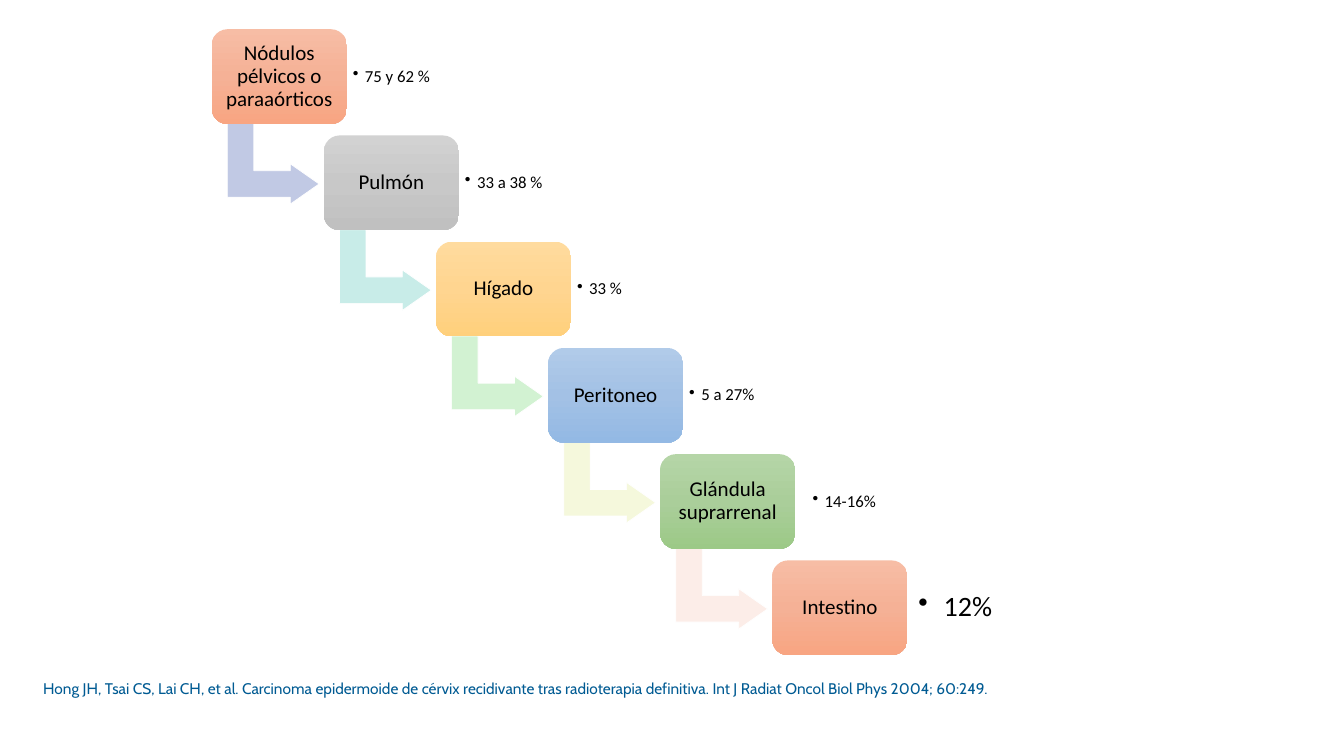
import copy
from dataclasses import dataclass

import pptx
import pptx.dml.color
import pptx.enum.shapes
import pptx.enum.text
import pptx.oxml
import pptx.oxml.ns
import pptx.shapes.autoshape
import pptx.slide
import pptx.util

Inches = pptx.util.Inches
Align = pptx.enum.text.PP_ALIGN
Preset = pptx.enum.shapes.MSO_SHAPE

COLORS: dict[str, str] = {
    "black": "000000",
    "white": "FFFFFF",
    "cite": "005B93",
    "blue arrow": "C1C9E4",
    "teal arrow": "C8ECE8",
    "green arrow": "D2F2D2",
    "lime arrow": "F5F8DC",
    "pink arrow": "FCEDE8",
    "orange top": "F7BDA5", "orange mid": "F5B196", "orange low": "F8A582",
    "gray top": "D2D2D2", "gray mid": "C8C8C8", "gray low": "C0C0C0",
    "gold top": "FFDB9E", "gold mid": "FFD590", "gold low": "FFD07C",
    "blue top": "B1CBE9", "blue mid": "A3C1E5", "blue low": "93B9E4",
    "green top": "B5D5A7", "green mid": "AACE9A", "green low": "9CC987",
}
LEFT, TOP = 2.1, 0.29
STEP_X, STEP_Y = 1.112, 1.054
BOX_W, BOX_H = 1.34, 0.94


@dataclass(frozen=True)
class Site:
    name: str
    rate: str
    tone: str
    arrow: str = ""
    size: float = 12
    hang: float = 0.12
    inset: float = 0.06
    align: Align = Align.LEFT


SITES: list[Site] = [
    Site("Nódulos pélvicos o paraaórticos", "75 y 62 %", "orange", "blue arrow"),
    Site("Pulmón", "33 a 38 %", "gray", "teal arrow"),
    Site("Hígado", "33 %", "gold", "green arrow"),
    Site("Peritoneo", "5 a 27%", "blue", "lime arrow"),
    Site("Glándula suprarrenal", "14-16%", "green", "pink arrow", align=Align.CENTER),
    Site("Intestino", "12%", "orange", size=20, hang=0.25, inset=0.11),
]


def tint(name: str) -> pptx.dml.color.RGBColor:
    return pptx.dml.color.RGBColor.from_string(COLORS[name])


def write(shape: pptx.shapes.autoshape.Shape, text: str, *, size: float,
          font: str = "Calibri", color: str = "black", align: Align = Align.LEFT,
          inset: float | None = None, hang: float = 0, line: float = 0.9,
          anchor: pptx.enum.text.MSO_ANCHOR = pptx.enum.text.MSO_ANCHOR.MIDDLE) -> None:
    frame = shape.text_frame
    frame.word_wrap = True
    frame.vertical_anchor = anchor
    if inset is not None:
        frame.margin_left = frame.margin_right = Inches(inset)
        frame.margin_top = frame.margin_bottom = Inches(inset)
    para = frame.paragraphs[0]
    para.alignment = align
    para.line_spacing = line
    if hang:
        para.level = 1
        props = para._p.get_or_add_pPr()
        props.set("marL", str(Inches(hang)))
        props.set("indent", str(-Inches(hang)))
        mark = pptx.oxml.ns.qn("a:buChar")
        props.append(props.makeelement(mark, {"char": "•"}))
    run = para.add_run()
    run.text = text
    run.font.name = font
    run.font.size = pptx.util.Pt(size)
    run.font.color.rgb = tint(color)


def shade(shape: pptx.shapes.autoshape.Shape, tone: str) -> None:
    fill = shape.fill
    fill.gradient()
    fill.gradient_angle = 270
    stops = shape._element.spPr.find(".//" + pptx.oxml.ns.qn("a:gsLst"))
    stops.insert(1, copy.deepcopy(stops[0]))
    for stop, part, place in zip(fill.gradient_stops, ("top", "mid", "low"), (0, 0.5, 1)):
        stop.color.rgb = tint(f"{tone} {part}")
        stop.position = place


def draw_arrow(slide: pptx.slide.Slide, left: float, top: float, color: str) -> None:
    arrow = slide.shapes.add_shape(Preset.BENT_UP_ARROW, Inches(left), Inches(top),
                                   Inches(0.8), Inches(0.91))
    arrow.rotation = 90
    for spot, value in enumerate((0.328, 0.25, 0.358)):
        arrow.adjustments[spot] = value
    arrow.shadow.inherit = False
    arrow.fill.solid()
    arrow.fill.fore_color.rgb = tint(color)
    arrow.line.color.rgb = tint("white")
    arrow.line.width = pptx.util.Pt(0.5)


def draw_site(slide: pptx.slide.Slide, site: Site, left: float, top: float) -> None:
    if site.arrow:
        draw_arrow(slide, left + 0.21, top + 0.88, site.arrow)
    box = slide.shapes.add_shape(Preset.ROUNDED_RECTANGLE, Inches(left), Inches(top),
                                 Inches(BOX_W), Inches(BOX_H))
    box.adjustments[0] = 0.167
    box.shadow.inherit = False
    box.line.fill.background()
    shade(box, site.tone)
    write(box, site.name, size=15, align=Align.CENTER, inset=0.06)
    label = slide.shapes.add_textbox(Inches(left + BOX_W), Inches(top + 0.09),
                                     Inches(0.97), Inches(0.76))
    write(label, site.rate, size=site.size, align=site.align,
          inset=site.inset, hang=site.hang)


def main() -> None:
    deck = pptx.Presentation()
    deck.slide_width, deck.slide_height = Inches(13.33), Inches(7.5)
    slide = deck.slides.add_slide(deck.slide_layouts[6])
    for step, site in enumerate(SITES):
        draw_site(slide, site, LEFT + step * STEP_X, TOP + step * STEP_Y)
    cite = slide.shapes.add_textbox(Inches(0.33), Inches(6.69), Inches(12.43), Inches(0.29))
    write(cite, "Hong JH, Tsai CS, Lai CH, et al. Carcinoma epidermoide de cérvix recidivante "
          "tras radioterapia definitiva. Int J Radiat Oncol Biol Phys 2004; 60:249.",
          size=11, font="Cabin", color="cite", line=1.0,
          anchor=pptx.enum.text.MSO_ANCHOR.TOP)
    deck.save("out.pptx")


if __name__ == "__main__":
    main()
